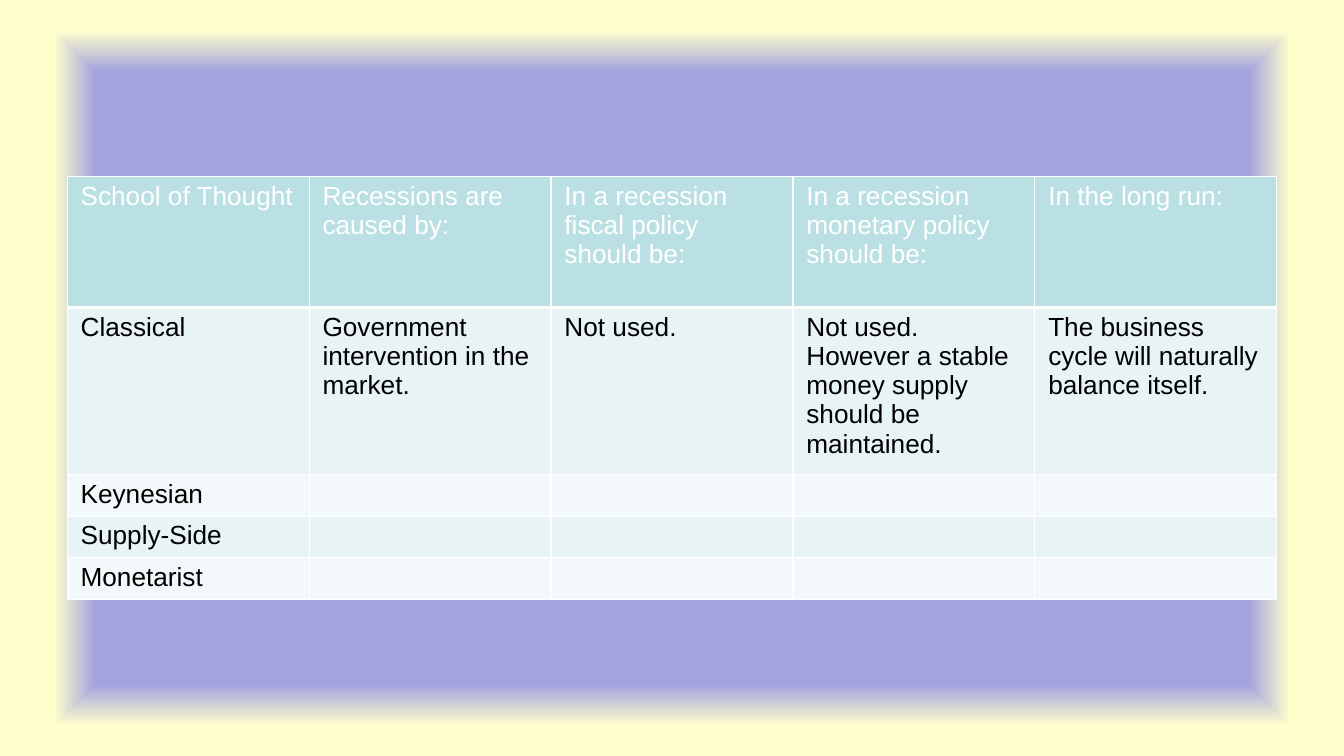
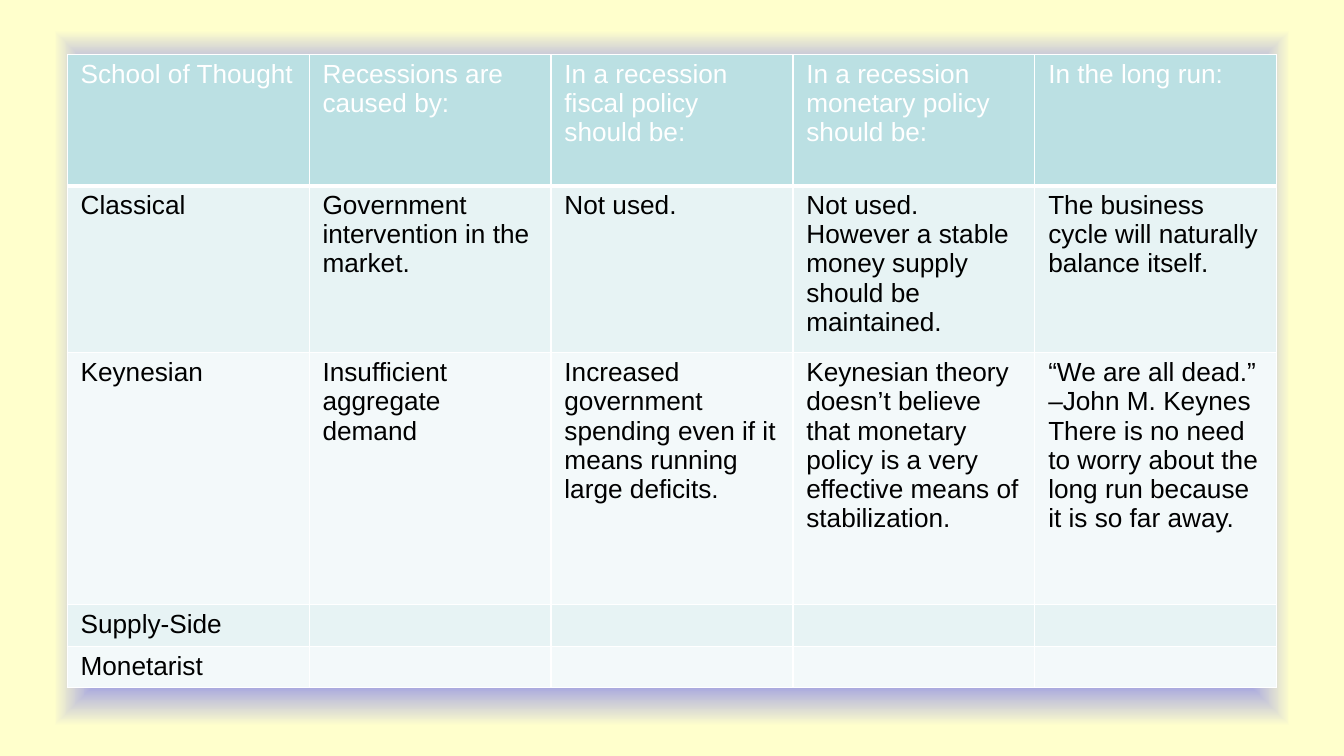
from lxml.etree import SubElement
from pptx import Presentation
from pptx.dml.color import RGBColor
from pptx.oxml.ns import qn
from pptx.util import Pt

HEX = {
    "center": "A3A3E0",
    "edge": "FFFFCC",
    "head": "BBE0E3",
    "odd": "E7F3F4",
    "even": "F3F9FA",
    "white": "FFFFFF",
    "black": "000000",
}
FONT = "Arial"
SIZE = 18.7
HEADS = [
    "School of Thought",
    "Recessions are caused by:",
    "In a recession fiscal policy should be:",
    "In a recession monetary policy should be:",
    "In the long run:",
]
CLASSIC = [
    "Classical",
    "Government intervention in the market.",
    "Not used.",
    "Not used. However a stable money supply should be maintained.",
    "The business cycle will naturally balance itself.",
]
KEYNES = [
    "Keynesian",
    "Insufficient aggregate demand",
    "Increased government spending even if it means running large deficits.",
    "Keynesian theory doesn’t believe that monetary policy is a very effective means of stabilization.",
    "“We are all dead.” –John M. Keynes There is no need to worry about the long run because it is so far away.",
]
TALL, MID, DEEP, LOW = 93.6, 119.4, 180, 29.7


def color(name):
    """Return the named colour."""
    return RGBColor.from_string(HEX[name])


def paint(master):
    """Give the master its framed gradient background."""
    fill = master.background.fill
    fill.gradient()
    for stop, place, name in zip(fill.gradient_stops, (0.81, 0.92), ("center", "edge")):
        stop.position = place
        stop.color.rgb = color(name)
    grad = master.element.find(".//" + qn("a:gradFill"))
    grad.remove(grad.find(qn("a:lin")))
    shade = SubElement(grad, qn("a:path"), {"path": "shape"})
    SubElement(shade, qn("a:fillToRect"), dict.fromkeys("ltrb", "50000"))


def border(cell, base):
    """Draw white lines around a cell, with the given bottom width."""
    props = cell._tc.get_or_add_tcPr()
    for side, width in (("L", 1), ("R", 1), ("T", 1), ("B", base)):
        line = SubElement(props, qn("a:ln" + side), {"w": str(Pt(width))})
        solid = SubElement(line, qn("a:solidFill"))
        SubElement(solid, qn("a:srgbClr"), {"val": HEX["white"]})


def write(cell, text, row):
    """Fill one cell and style it by its row."""
    border(cell, 1 if row else 3)
    cell.fill.solid()
    cell.fill.fore_color.rgb = color(("odd" if row % 2 else "even") if row else "head")
    cell.margin_left = cell.margin_right = Pt(9.6)
    cell.margin_top = cell.margin_bottom = Pt(3.6)
    cell.text = text
    font = cell.text_frame.paragraphs[0].font
    font.name = FONT
    font.size = Pt(SIZE)
    font.bold = False
    font.color.rgb = color("black" if row else "white")


def grid(slide, box, rows, heights):
    """Place the table of schools in a box of left, top and width."""
    left, top, width = box
    frame = slide.shapes.add_table(
        len(rows), len(HEADS), Pt(left), Pt(top), Pt(width), Pt(sum(heights))
    )
    table = frame.table
    table.horz_banding = False
    for col in table.columns:
        col.width = Pt(width / len(HEADS))
    for num, (texts, height) in enumerate(zip(rows, heights)):
        table.rows[num].height = Pt(height)
        for pos in range(len(HEADS)):
            write(table.cell(num, pos), texts[pos] if pos < len(texts) else "", num)


def main():
    """Build and save the slides."""
    deck = Presentation()
    deck.slide_width, deck.slide_height = Pt(960), Pt(540)
    paint(deck.slide_master)
    tail = [["Supply-Side"], ["Monetarist"]]
    for top, school, height in ((126, KEYNES[:1], LOW), (39, KEYNES, DEEP)):
        slide = deck.slides.add_slide(deck.slide_layouts[6])
        rows = [HEADS, CLASSIC, school, *tail]
        grid(slide, (48, top, 864), rows, [TALL, MID, height, LOW, LOW])
    deck.save("out.pptx")


if __name__ == "__main__":
    main()
